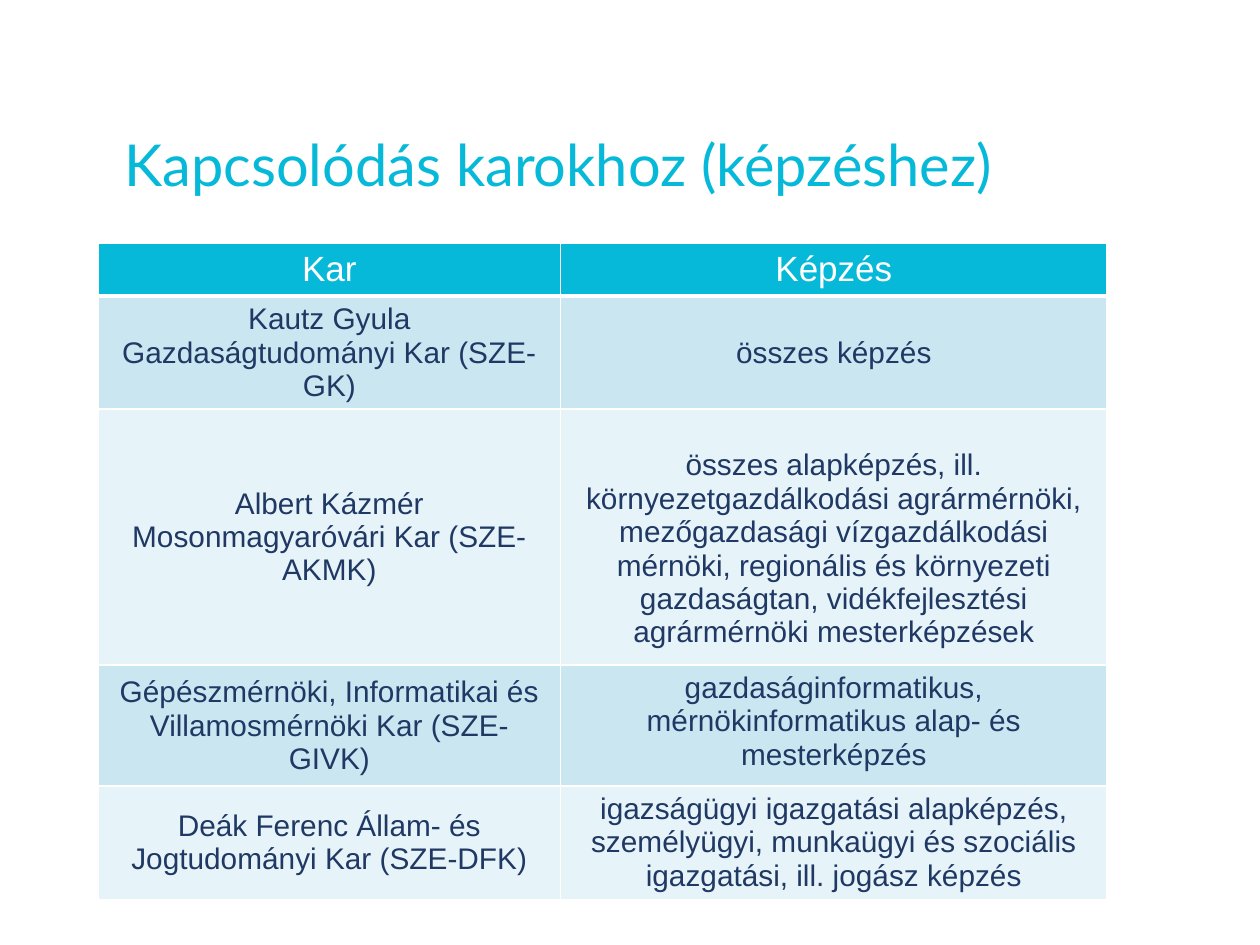
from lxml import etree
from pptx import Presentation
from pptx import util as u
from pptx.dml.color import RGBColor
from pptx.enum import text
from pptx.oxml.ns import qn

CYAN = RGBColor(0x07, 0xB9, 0xD9)
NAVY = RGBColor(0x1F, 0x38, 0x64)
WHITE = RGBColor(0xFF, 0xFF, 0xFF)
BANDS = [RGBColor(0xE6, 0xF3, 0xF8), RGBColor(0xCA, 0xE6, 0xF1)]

ROWS = [
    ("Kar", "Képzés"),
    ("Kautz Gyula Gazdaságtudományi Kar (SZE-GK)", "összes képzés"),
    ("Albert Kázmér Mosonmagyaróvári Kar (SZE-AKMK)",
     "összes alapképzés, ill. környezetgazdálkodási agrármérnöki, "
     "mezőgazdasági vízgazdálkodási mérnöki, regionális és környezeti "
     "gazdaságtan, vidékfejlesztési agrármérnöki mesterképzések"),
    ("Gépészmérnöki, Informatikai és Villamosmérnöki Kar (SZE-GIVK)",
     "gazdaságinformatikus, mérnökinformatikus alap- és mesterképzés"),
    ("Deák Ferenc Állam- és Jogtudományi Kar (SZE-DFK)",
     "igazságügyi igazgatási alapképzés, személyügyi, munkaügyi és szociális "
     "igazgatási, ill. jogász képzés"),
]
WIDTHS = [9.32, 11.02]
HEIGHTS = [1.07, 2.28, 5.16, 2.44, 2.28]


def format_font(font, color, **values):
    for name, value in values.items():
        setattr(font, name, value)
    font.color.rgb = color


def add_border(cell, side, points):
    line = etree.SubElement(cell._tc.get_or_add_tcPr(), qn("a:ln" + side), w=str(u.Pt(points)))
    fill = etree.SubElement(line, qn("a:solidFill"))
    etree.SubElement(fill, qn("a:srgbClr"), val=str(WHITE))


deck = Presentation()
deck.slide_width, deck.slide_height = u.Cm(25.4), u.Cm(19.05)
page = deck.slides.add_slide(deck.slide_layouts[6])

table = page.shapes.add_table(
    len(ROWS), len(WIDTHS), u.Cm(1.98), u.Cm(4.9), u.Cm(sum(WIDTHS)), u.Cm(sum(HEIGHTS))
).table
table.horz_banding = False
for column, width in zip(table.columns, WIDTHS):
    column.width = u.Cm(width)

for r, (labels, height) in enumerate(zip(ROWS, HEIGHTS)):
    table.rows[r].height = u.Cm(height)
    header = r == 0
    for c, label in enumerate(labels):
        cell = table.cell(r, c)
        for side in "LRTB":
            thick = (header and side == "B") or (r == 1 and side == "T")
            add_border(cell, side, 3 if thick else 1)
        cell.fill.solid()
        cell.fill.fore_color.rgb = CYAN if header else BANDS[r % 2]
        top_aligned = c == 1 and r > 1
        cell.vertical_anchor = text.MSO_ANCHOR.TOP if top_aligned else text.MSO_ANCHOR.MIDDLE
        para = cell.text_frame.paragraphs[0]
        para.alignment = text.PP_ALIGN.CENTER
        span = para.add_run()
        span.text = label
        format_font(span.font, WHITE if header else NAVY, name="Arial",
                    size=u.Pt(20 if header else 17), bold=False)
table.cell(2, 1).margin_top = u.Cm(0.8)

box = page.shapes.add_textbox(u.Cm(2.26), u.Cm(2.62), u.Cm(20.32), u.Cm(1.7))
box.text_frame.word_wrap = True
para = box.text_frame.paragraphs[0]
para.line_spacing = 0.9
span = para.add_run()
span.text = "Kapcsolódás karokhoz (képzéshez)"
format_font(span.font, CYAN, name="Lato", size=u.Pt(33))

deck.save("out.pptx")
